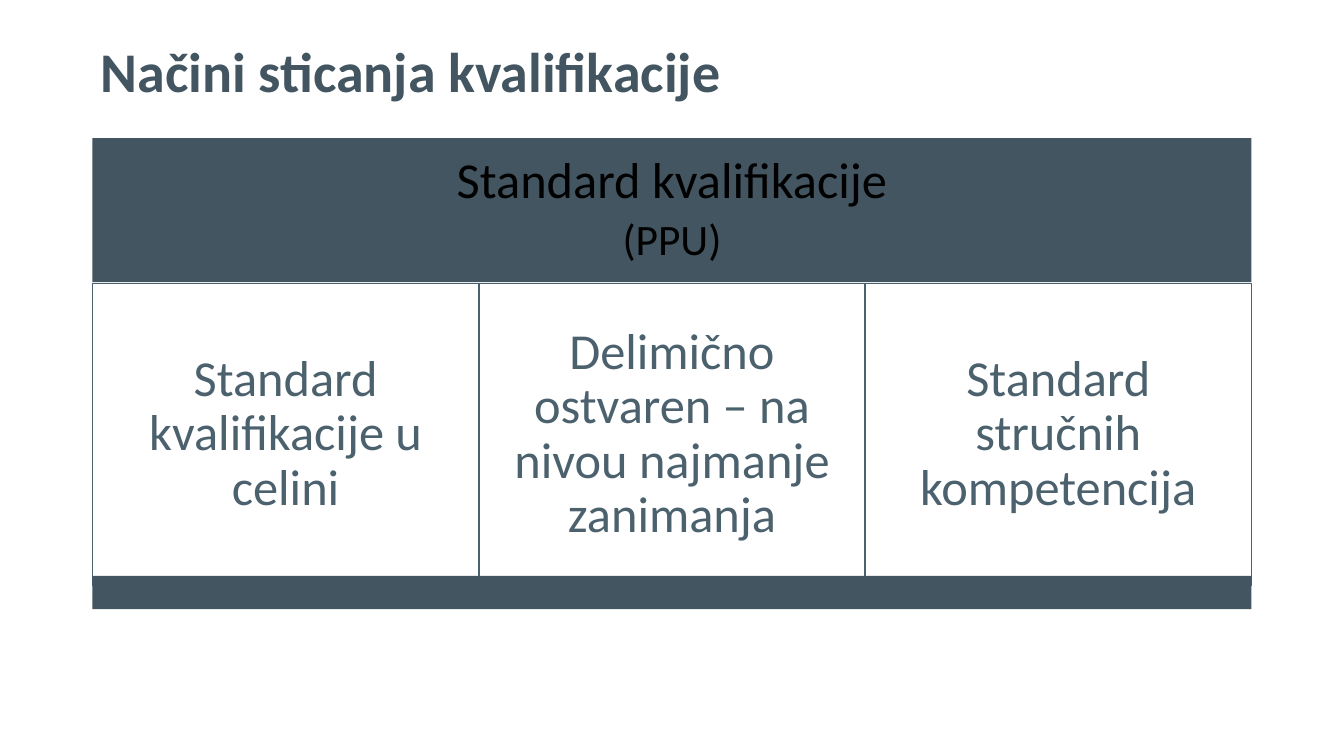
from pptx import Presentation
from pptx import util as u
from pptx.dml.color import RGBColor
from pptx.enum import shapes, text

SLATE = RGBColor(0x42, 0x55, 0x60)
STEEL = RGBColor(0x4B, 0x61, 0x6D)
BLACK = RGBColor(0, 0, 0)
WHITE = RGBColor(0xFF, 0xFF, 0xFF)
FONT = "Calibri"
PATHWAYS = [
    "Standard kvalifikacije u celini",
    "Delimično ostvaren – na nivou najmanje zanimanja",
    "Standard stručnih kompetencija",
]


def write_line(paragraph, wording, size, color, bold=False):
    paragraph.line_spacing = 0.9
    run = paragraph.add_run()
    run.text = wording
    run.font.name = FONT
    run.font.size = u.Pt(size)
    run.font.bold = bold
    run.font.color.rgb = color


def add_title(slide, left, top, width, height):
    title = slide.shapes.add_textbox(left, top, width, height)
    frame = title.text_frame
    frame.word_wrap = True
    frame.vertical_anchor = text.MSO_ANCHOR.MIDDLE
    write_line(frame.paragraphs[0], "Načini sticanja kvalifikacije", 40, SLATE, True)


def add_panel(slide, left, top, width, height, fill, lines=(), color=BLACK, border=None):
    panel = slide.shapes.add_shape(shapes.MSO_SHAPE.RECTANGLE, left, top, width, height)
    panel.shadow.inherit = False
    panel.fill.solid()
    panel.fill.fore_color.rgb = fill
    if border is None:
        panel.line.fill.background()
    else:
        panel.line.color.rgb = border
        panel.line.width = u.Pt(1)
    frame = panel.text_frame
    frame.word_wrap = True
    frame.vertical_anchor = text.MSO_ANCHOR.MIDDLE
    frame.margin_left = frame.margin_right = u.Cm(0.38)
    frame.margin_top = frame.margin_bottom = u.Cm(0.38)
    for index, (wording, size) in enumerate(lines):
        paragraph = frame.add_paragraph() if index else frame.paragraphs[0]
        paragraph.alignment = text.PP_ALIGN.CENTER
        if index < len(lines) - 1:
            paragraph.space_after = u.Pt(6)
        write_line(paragraph, wording, size, color)


def add_qualification_block(slide, left, top, width, height):
    header_height = u.Cm(3.63)
    column_top = top + u.Cm(3.66)
    column_height = u.Cm(7.62)
    base_height = u.Cm(0.84)
    column_width = width // len(PATHWAYS)
    add_panel(slide, left, top, width, header_height, SLATE,
              [("Standard kvalifikacije", 36), ("(PPU)", 31)])
    for index, pathway in enumerate(PATHWAYS):
        add_panel(slide, left + index * column_width, column_top, column_width,
                  column_height, WHITE, [(pathway, 36)], STEEL, STEEL)
    add_panel(slide, left, top + height - base_height, width, base_height, SLATE)


def main():
    presentation = Presentation()
    presentation.slide_width = u.Cm(33.87)
    presentation.slide_height = u.Cm(19.05)
    slide = presentation.slides.add_slide(presentation.slide_layouts[6])
    add_title(slide, u.Cm(2.29), u.Cm(0.71), u.Cm(29.21), u.Cm(2.34))
    add_qualification_block(slide, u.Cm(2.33), u.Cm(3.48), u.Cm(29.21), u.Cm(11.87))
    presentation.save("out.pptx")


if __name__ == "__main__":
    main()
